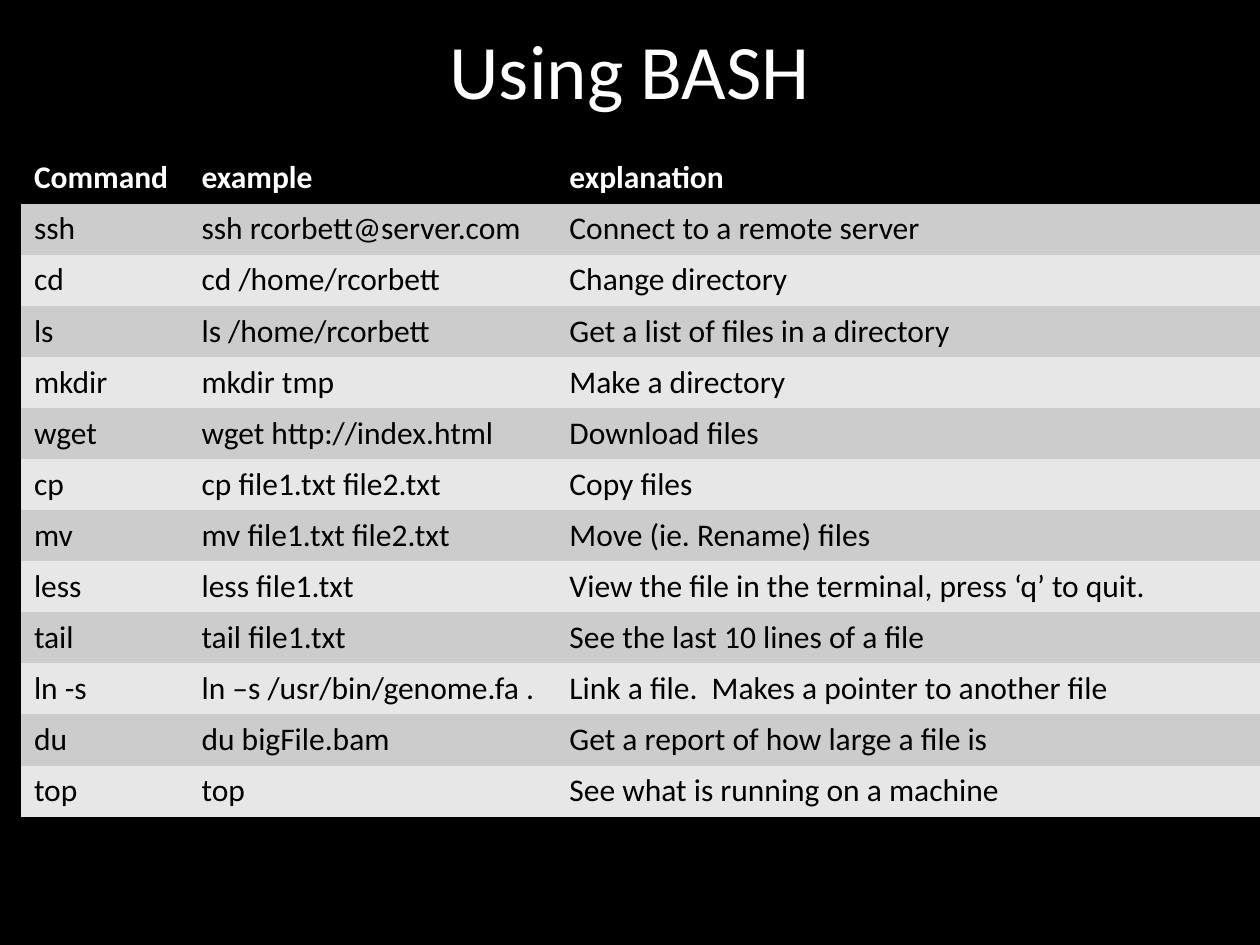
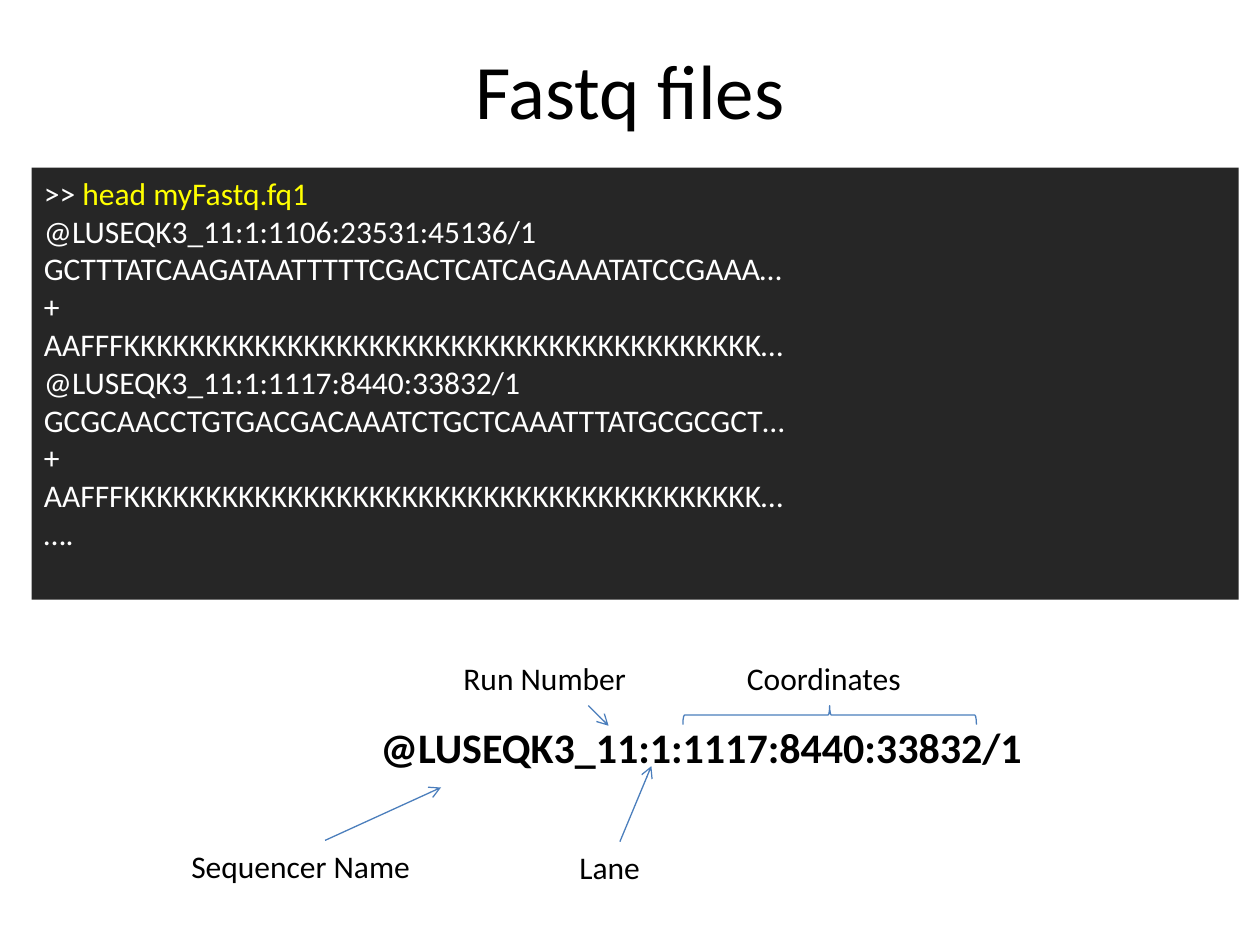
"""Build two slides: a table of shell commands and a guide to Fastq files."""
from lxml import etree
from pptx import Presentation
from pptx.dml.color import RGBColor
from pptx.enum.shapes import MSO_CONNECTOR, MSO_SHAPE
from pptx.enum.text import MSO_ANCHOR, PP_ALIGN
from pptx.oxml.ns import qn
from pptx.util import Inches, Pt

LEFT, CENTER = PP_ALIGN.LEFT, PP_ALIGN.CENTER
TOP, MIDDLE = MSO_ANCHOR.TOP, MSO_ANCHOR.MIDDLE
RECT, BRACE = MSO_SHAPE.RECTANGLE, MSO_SHAPE.RIGHT_BRACE
STRAIGHT = MSO_CONNECTOR.STRAIGHT

BLACK = RGBColor(0x00, 0x00, 0x00)
WHITE = RGBColor(0xFF, 0xFF, 0xFF)
YELLOW = RGBColor(0xFF, 0xFF, 0x00)
COAL = RGBColor(0x26, 0x26, 0x26)
BLUE = RGBColor(0x4B, 0x7E, 0xBC)
BANDS = RGBColor(0xE7, 0xE7, 0xE7), RGBColor(0xCC, 0xCC, 0xCC)

PLAIN = "{2D5ABB26-0587-4C30-8999-92F81FD0307C}"
BODY = {"name": "Calibri", "size": Pt(18), "bold": False}
HEAD = {**BODY, "bold": True}
BIG = {**BODY, "size": Pt(44)}
READ = {**HEAD, "size": Pt(24)}

COLS = 1.33, 2.92, 5.58
ROW = 5.27 / 13
ROWS = [
    ("Command", "example", "explanation"),
    ("ssh", "ssh rcorbett@server.com", "Connect to a remote server"),
    ("cd", "cd /home/rcorbett", "Change directory"),
    ("ls", "ls /home/rcorbett", "Get a list of files in a directory"),
    ("mkdir", "mkdir tmp", "Make a directory"),
    ("wget", "wget http://index.html", "Download files"),
    ("cp", "cp file1.txt file2.txt", "Copy files"),
    ("mv", "mv file1.txt file2.txt", "Move (ie. Rename) files"),
    ("less", "less file1.txt", "View the file in the terminal, press ‘q’ to quit."),
    ("tail", "tail file1.txt", "See the last 10 lines of a file"),
    ("ln -s", "ln –s /usr/bin/genome.fa .", "Link a file.  Makes a pointer to another file"),
    ("du", "du bigFile.bam", "Get a report of how large a file is"),
    ("top", "top", "See what is running on a machine"),
]

NAME = "@LUSEQK3_11:1:1117:8440:33832/1"
SCORE = "AAFFF" + "K" * 39 + "…"
LINES = [
    "@LUSEQK3_11:1:1106:23531:45136/1",
    "GCTTTATCAAGATAATTTTTCGACTCATCAGAAATATCCGAAA…",
    "+",
    SCORE,
    NAME,
    "GCGCAACCTGTGACGACAAATCTGCTCAAATTTATGCGCGCT…",
    "+",
    SCORE,
    "….",
]
LABELS = [
    (NAME, (2.92, 5.68, 5.29, 0.5), READ),
    ("Sequencer Name", (1.42, 6.67, 2.33, 0.4), BODY),
    ("Run Number", (3.58, 5.18, 1.5, 0.4), BODY),
    ("Lane", (4.5, 6.68, 0.83, 0.4), BODY),
    ("Coordinates", (5.83, 5.18, 1.5, 0.4), BODY),
]
ARROWS = [
    (2.58, 6.67, 3.5, 6.25),
    (4.67, 5.6, 4.83, 5.76),
    (4.92, 6.68, 5.17, 6.08),
]


def place(box):
    return [Inches(n) for n in box]


def write(para, text, color, style):
    run = para.add_run()
    run.text = text
    for key, value in style.items():
        setattr(run.font, key, value)
    run.font.color.rgb = color


def start(deck, text, top, back, ink):
    slide = deck.slides.add_slide(deck.slide_layouts[5])
    slide.background.fill.solid()
    slide.background.fill.fore_color.rgb = back
    title = slide.shapes.title
    title.left, title.top, title.width, title.height = place((0.5, top, 9, 1.25))
    title.text_frame.vertical_anchor = MIDDLE
    para = title.text_frame.paragraphs[0]
    para.alignment = CENTER
    write(para, text, ink, BIG)
    return slide.shapes


def add_grid(shapes):
    box = place((0.17, 1.21, sum(COLS), ROW * len(ROWS)))
    frame = shapes.add_table(len(ROWS), len(COLS), *box)
    next(frame._element.iter(qn("a:tableStyleId"))).text = PLAIN
    table = frame.table
    for col, width in zip(table.columns, COLS):
        col.width = Inches(width)
    for i, texts in enumerate(ROWS):
        table.rows[i].height = Inches(ROW)
        fill, ink, style = (BANDS[i % 2], BLACK, BODY) if i else (BLACK, WHITE, HEAD)
        for cell, text in zip(table.rows[i].cells, texts):
            cell.fill.solid()
            cell.fill.fore_color.rgb = fill
            write(cell.text_frame.paragraphs[0], text, ink, style)


def add_code(shapes):
    panel = shapes.add_shape(RECT, *place((0.25, 1.33, 9.58, 3.43)))
    panel.shadow.inherit = False
    panel.fill.solid()
    panel.fill.fore_color.rgb = COAL
    panel.line.fill.background()
    frame = panel.text_frame
    frame.word_wrap, frame.vertical_anchor = True, TOP
    first = frame.paragraphs[0]
    first.alignment = LEFT
    write(first, ">> ", WHITE, BODY)
    write(first, "head myFastq.fq1", YELLOW, BODY)
    for text in LINES:
        para = frame.add_paragraph()
        para.alignment = LEFT
        write(para, text, WHITE, BODY)


def add_arrow(shapes, ends):
    link = shapes.add_connector(STRAIGHT, *place(ends))
    link.line.color.rgb, link.line.width = BLUE, Pt(0.75)
    etree.SubElement(link.line._get_or_add_ln(), qn("a:tailEnd"), type="arrow")
    etree.SubElement(link._element.spPr, qn("a:effectLst"))


def add_guide(shapes):
    for text, box, style in LABELS:
        frame = shapes.add_textbox(*place(box)).text_frame
        frame.word_wrap = True
        write(frame.paragraphs[0], text, BLACK, style)
    for ends in ARROWS:
        add_arrow(shapes, ends)
    brace = shapes.add_shape(BRACE, *place((6.51, 4.51, 0.15, 2.33)))
    brace.rotation = 270
    brace.shadow.inherit = False
    brace.fill.background()
    brace.line.color.rgb, brace.line.width = BLUE, Pt(0.75)


def main():
    deck = Presentation()
    deck.slide_width, deck.slide_height = Inches(10), Inches(7.5)
    add_grid(start(deck, "Using BASH", -0.08, BLACK, WHITE))
    shapes = start(deck, "Fastq files", 0.08, WHITE, BLACK)
    add_code(shapes)
    add_guide(shapes)
    deck.save("out.pptx")


if __name__ == "__main__":
    main()
